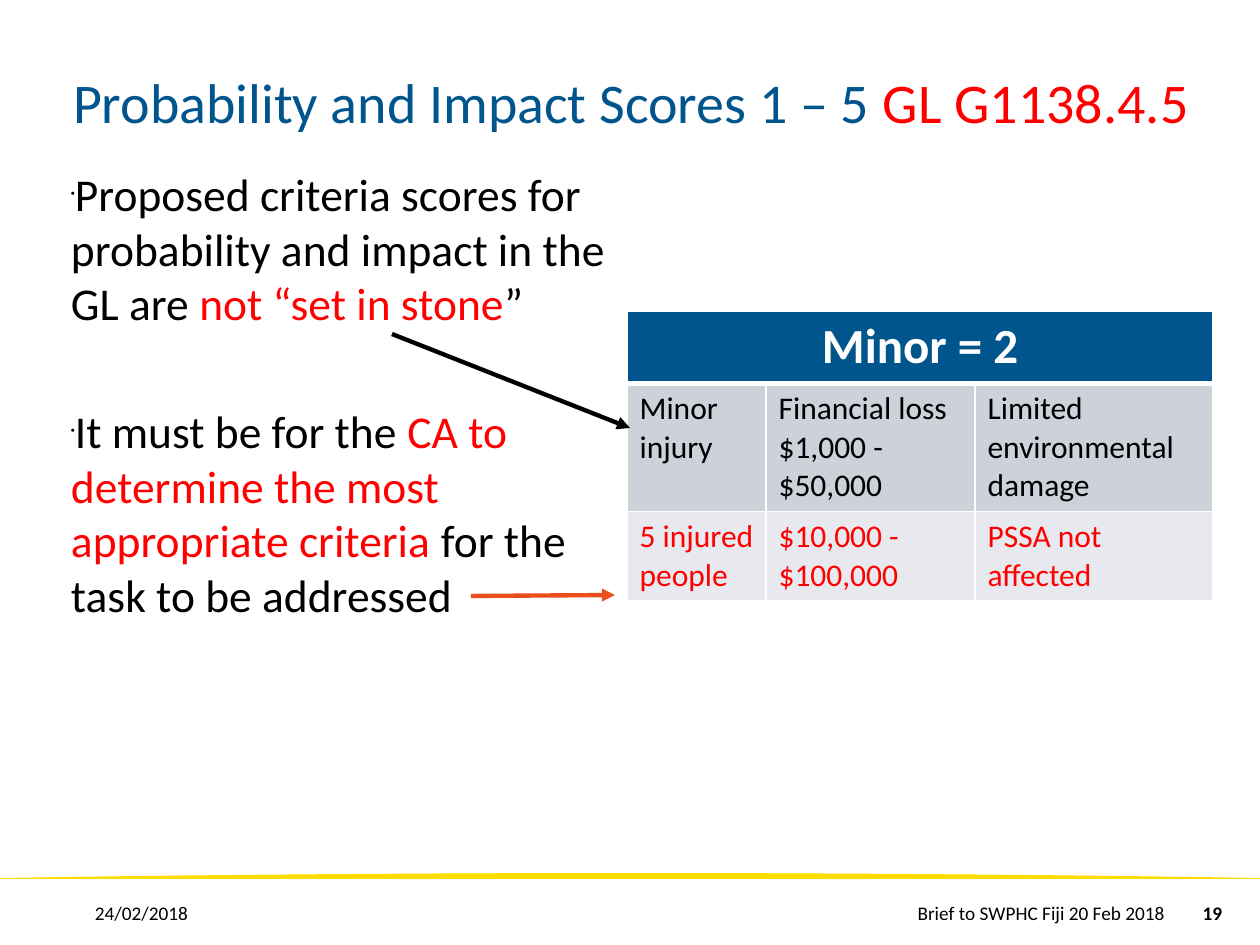
import pptx
import pptx.util
import pptx.dml.color
import pptx.enum.text
import pptx.enum.shapes
import pptx.oxml
import pptx.oxml.ns
from lxml import etree

PX = 914400 / 126
FONT = "Calibri"
BLUE, RED, BLACK, WHITE = "00558C", "FF0000", "000000", "FFFFFF"
ALIGN = pptx.enum.text.PP_ALIGN
ANCHOR = pptx.enum.text.MSO_ANCHOR


def px(n):
    return pptx.util.Emu(round(n * PX))


def rgb(code):
    return pptx.dml.color.RGBColor.from_string(code)


def tag(parent, name, **attrs):
    return etree.SubElement(parent, pptx.oxml.ns.qn(name), attrs)


def place(shape, box):
    shape.left, shape.top, shape.width, shape.height = map(px, box)


def setup(frame, anchor):
    frame.word_wrap = True
    frame.auto_size = pptx.enum.text.MSO_AUTO_SIZE.NONE
    frame.vertical_anchor = anchor
    frame.margin_left = frame.margin_top = 0
    frame.margin_right = frame.margin_bottom = 0


def write(para, runs, size, align=ALIGN.LEFT, bold=False):
    para.alignment = align
    for text, color in runs:
        run = para.add_run()
        run.text = text
        font = run.font
        font.name, font.size, font.bold = FONT, pptx.util.Pt(size), bold
        font.color.rgb = rgb(color)


def title(slide, box):
    shape = slide.shapes.title
    place(shape, box)
    setup(shape.text_frame, ANCHOR.BOTTOM)
    write(shape.text_frame.paragraphs[0],
          [("Probability and Impact Scores 1 – 5 ", BLUE), ("GL G1138.4.5", RED)], 32)


def body(slide, box):
    shape = slide.placeholders[1]
    place(shape, box)
    frame = shape.text_frame
    setup(frame, ANCHOR.TOP)
    points = [
        [("Proposed criteria scores for probability and impact in the GL are ", BLACK),
         ("not “set in stone", RED), ("”", BLACK)],
        [("It must be for the ", BLACK),
         ("CA to determine the most appropriate criteria ", RED),
         ("for the task to be addressed", BLACK)],
    ]
    for i, runs in enumerate(points):
        para = frame.add_paragraph() if i else frame.paragraphs[0]
        # Tiny bullet, no hanging indent
        props = para._p.get_or_add_pPr()
        props.set("marL", "0")
        props.set("indent", "0")
        tag(props, "a:buSzPct", val="25000")
        tag(props, "a:buChar", char="•")
        para.space_before = pptx.util.Pt(0)
        para.space_after = pptx.util.Pt(6 if i else 42)
        write(para, runs, 26)


def border(cell, low):
    props = cell._tc.get_or_add_tcPr()
    for side, width in (("L", 1), ("R", 1), ("T", 1), ("B", low)):
        line = tag(props, "a:ln" + side, w=str(pptx.util.Pt(width)))
        tag(tag(line, "a:solidFill"), "a:srgbClr", val=WHITE)


def scores(slide, box):
    rows = [
        (["Minor = 2", "", ""], BLUE, WHITE),
        (["Minor injury", "Financial loss $1,000 - $50,000",
          "Limited environmental damage"], "CCD1DA", BLACK),
        (["5 injured people", "$10,000 - $100,000", "PSSA not affected"], "E7E9EE", RED),
    ]
    table = slide.shapes.add_table(3, 3, *map(px, box)).table
    table.first_row = table.horz_banding = False
    for col, width in zip(table.columns, (139, 209, 238)):
        col.width = px(width)
    table.cell(0, 0).merge(table.cell(0, 2))
    for r, (texts, fill, color) in enumerate(rows):
        head = r == 0
        table.rows[r].height = px(52)
        for c, text in enumerate(texts):
            cell = table.cell(r, c)
            border(cell, 3 if head else 1)
            cell.fill.solid()
            cell.fill.fore_color.rgb = rgb(fill)
            if text:
                write(cell.text_frame.paragraphs[0], [(text, color)],
                      28 if head else 18, ALIGN.CENTER if head else ALIGN.LEFT, head)


def arrow(slide, start, end, color):
    line = slide.shapes.add_connector(
        pptx.enum.shapes.MSO_CONNECTOR.STRAIGHT, *map(px, start + end))
    line.line.color.rgb = rgb(color)
    line.line.width = pptx.util.Pt(2.5)
    tag(line.line._get_or_add_ln(), "a:tailEnd", type="triangle")
    tag(line._element.spPr, "a:effectLst")


def band(slide, box):
    # Flat base with a shallow arch on top
    left, top, width, height = box
    steps = 40
    arch = [(px(left + width * i / steps),
             px(top + (height - 1) * (2 * i / steps - 1) ** 2))
            for i in range(steps + 1)]
    base = px(top + height)
    build = slide.shapes.build_freeform(px(left), base)
    build.add_line_segments(arch + [(px(left + width), base)], close=True)
    shape = build.convert_to_shape()
    shape.shadow.inherit = False
    shape.fill.solid()
    shape.fill.fore_color.rgb = rgb("FFDC00")
    shape.line.fill.background()


def footer(slide, box):
    left, top, width, height = box
    parts = [
        (95, 292, "24/02/2018", ALIGN.LEFT, False),
        (392, 773, "Brief to SWPHC Fiji 20 Feb 2018", ALIGN.RIGHT, False),
        (1165, width - 1165, "19", ALIGN.CENTER, True),
    ]
    for x, wide, text, align, bold in parts:
        shape = slide.shapes.add_textbox(*map(px, (left + x, top, wide, height)))
        setup(shape.text_frame, ANCHOR.MIDDLE)
        write(shape.text_frame.paragraphs[0], [(text, BLACK)], 11, align, bold)


def main():
    deck = pptx.Presentation()
    deck.slide_width, deck.slide_height = px(1260), px(945)
    slide = deck.slides.add_slide(deck.slide_layouts[1])
    band(slide, (0, 873, 1261, 6))
    title(slide, (73, 32, 1134, 103))
    body(slide, (71, 166, 557, 673))
    scores(slide, (627, 311, 586, 156))
    footer(slide, (0, 880, 1260, 65))
    arrow(slide, (392, 334), (630, 428), BLACK)
    arrow(slide, (471, 596), (615, 595), "E94E1B")
    deck.save("out.pptx")


if __name__ == "__main__":
    main()
